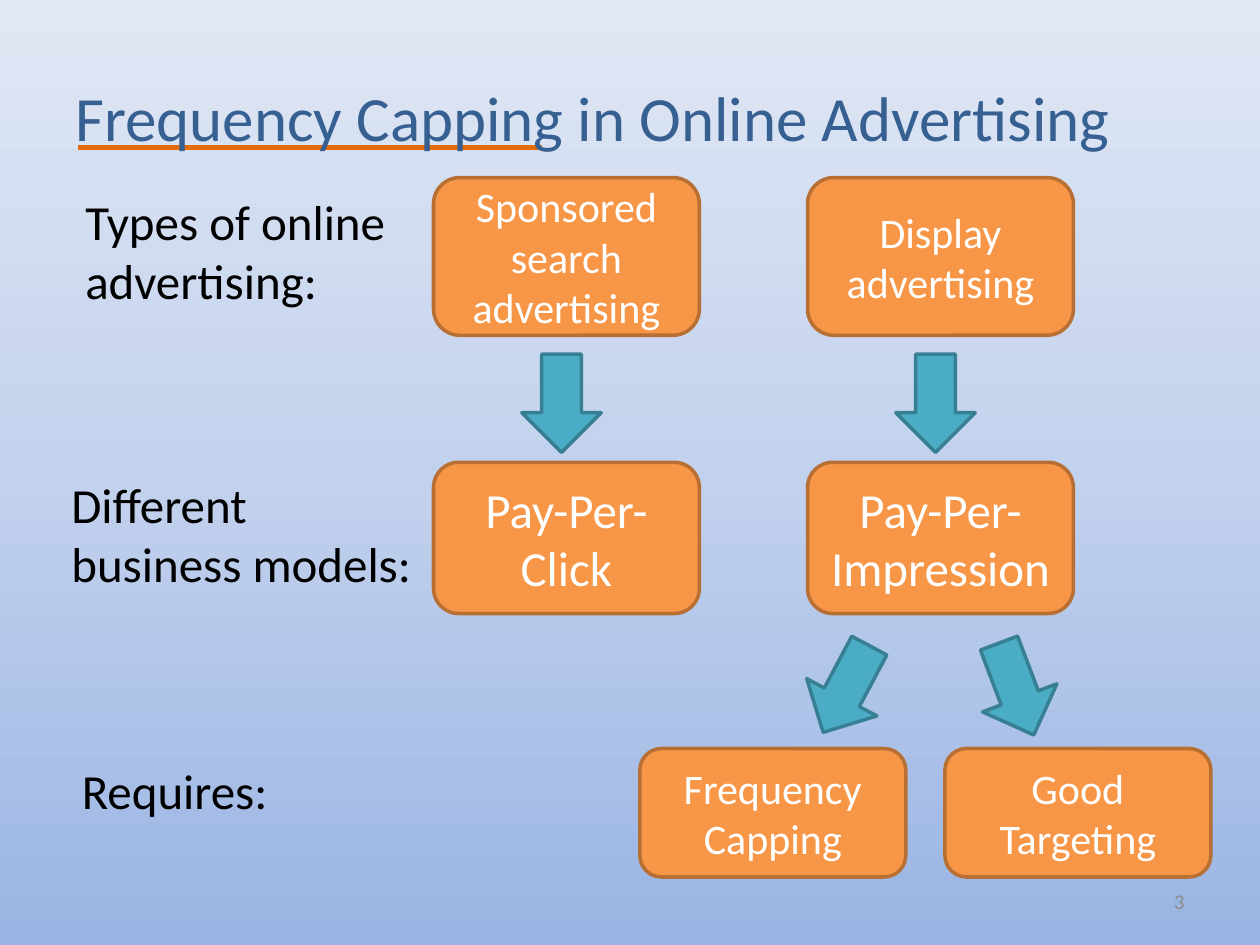
from copy import deepcopy

from lxml import etree
from pptx import Presentation
from pptx.dml.color import RGBColor
from pptx.enum.shapes import MSO_CONNECTOR, MSO_SHAPE
from pptx.enum.text import MSO_ANCHOR, PP_ALIGN
from pptx.oxml.ns import qn
from pptx.util import Cm, Pt

ROUNDED, DOWN_ARROW = MSO_SHAPE.ROUNDED_RECTANGLE, MSO_SHAPE.DOWN_ARROW
STRAIGHT = MSO_CONNECTOR.STRAIGHT
TOP, MIDDLE = MSO_ANCHOR.TOP, MSO_ANCHOR.MIDDLE
LEFT, CENTER, RIGHT = PP_ALIGN.LEFT, PP_ALIGN.CENTER, PP_ALIGN.RIGHT

THEME = {
    "font": "Calibri",
    "title": ("376092", 36),
    "label": ("000000", 28),
    "number": ("8C8C8C", 12),
    "box_text": "FFFFFF",
    "box": ("F79646", "B76F34"),
    "arrow": ("4BACC6", "377F92"),
    "outline": 2,
    "rule": ("E46C0A", 3),
    "background": [(0, "9AB5E4"), (0.5, "C2D1ED"), (1, "E1E8F5")],
}

# All lengths are in centimetres.
TITLE = "Frequency Capping in Online Advertising"
PAGE_NUMBER = "3"
BOX_WIDTH = 5.36
ARROW_WIDTH, ARROW_HEIGHT = 1.6, 1.98
ARROW_INDENT = 1.78  # from the left side of the box above
COLUMNS = (8.74, 16.28)
ROWS = [
    {"label": "Types of online advertising:", "label_at": (1.47, 3.73, 7.04, 2.64),
     "top": 3.58, "height": 3.18, "size": 24, "lefts": COLUMNS,
     "boxes": ("Sponsored search advertising", "Display advertising")},
    {"label": "Different business models:", "label_at": (1.19, 9.45, 7.54, 2.64),
     "top": 9.32, "height": 3.05, "size": 28, "lefts": COLUMNS,
     "boxes": ("Pay-Per-Click", "Pay-Per-Impression")},
    {"label": "Requires:", "label_at": (1.4, 15.21, 7.75, 1.45),
     "top": 15.09, "height": 2.59, "size": 24, "lefts": (12.9, 19.05),
     "boxes": ("Frequency Capping", "Good Targeting")},
]
# left, top, rotation
ARROWS = [(left + ARROW_INDENT, 7.14, 0) for left in COLUMNS]
ARROWS += [(16.26, 12.9, 28), (19.69, 12.9, 339.3)]


def rgb(code):
    return RGBColor.from_string(code)


def paint_background(page):
    fill = page.background.fill
    fill.gradient()
    fill.gradient_angle = 90
    stops = page.element.find(".//" + qn("a:gsLst"))
    stops.append(deepcopy(stops[-1]))
    for stop, (position, color) in zip(fill.gradient_stops, THEME["background"]):
        stop.position = position
        stop.color.rgb = rgb(color)


def write(shape, text, color, size, align, anchor):
    frame = shape.text_frame
    frame.word_wrap = True
    frame.vertical_anchor = anchor
    para = frame.paragraphs[0]
    para.text = text
    para.alignment = align
    para.font.name = THEME["font"]
    para.font.size = Pt(size)
    para.font.color.rgb = rgb(color)


def add_text(page, at, text, style, align=LEFT, anchor=TOP):
    box = page.shapes.add_textbox(*map(Cm, at))
    write(box, text, *THEME[style], align, anchor)


def add_figure(page, kind, at, style):
    figure = page.shapes.add_shape(kind, *map(Cm, at))
    fill, line = THEME[style]
    figure.shadow.inherit = False
    figure.fill.solid()
    figure.fill.fore_color.rgb = rgb(fill)
    figure.line.color.rgb = rgb(line)
    figure.line.width = Pt(THEME["outline"])
    return figure


def add_rule(page):
    color, width = THEME["rule"]
    rule = page.shapes.add_connector(STRAIGHT, Cm(1.57), Cm(2.97), Cm(10.92), Cm(2.97))
    rule.line.color.rgb = rgb(color)
    rule.line.width = Pt(width)
    etree.SubElement(rule._element.spPr, qn("a:effectLst"))


def main():
    deck = Presentation()
    deck.slide_width, deck.slide_height = Cm(25.4), Cm(19.05)
    page = deck.slides.add_slide(deck.slide_layouts[6])
    paint_background(page)
    add_rule(page)
    add_text(page, (1.27, 0.76, 22.86, 3.18), TITLE, "title", anchor=MIDDLE)
    add_text(page, (18.2, 17.66, 5.93, 1.01), PAGE_NUMBER, "number", RIGHT, MIDDLE)

    for row in ROWS:
        add_text(page, row["label_at"], row["label"], "label")
        for left, text in zip(row["lefts"], row["boxes"]):
            at = (left, row["top"], BOX_WIDTH, row["height"])
            box = add_figure(page, ROUNDED, at, "box")
            write(box, text, THEME["box_text"], row["size"], CENTER, MIDDLE)

    for left, top, rotation in ARROWS:
        at = (left, top, ARROW_WIDTH, ARROW_HEIGHT)
        add_figure(page, DOWN_ARROW, at, "arrow").rotation = rotation

    deck.save("out.pptx")


if __name__ == "__main__":
    main()
